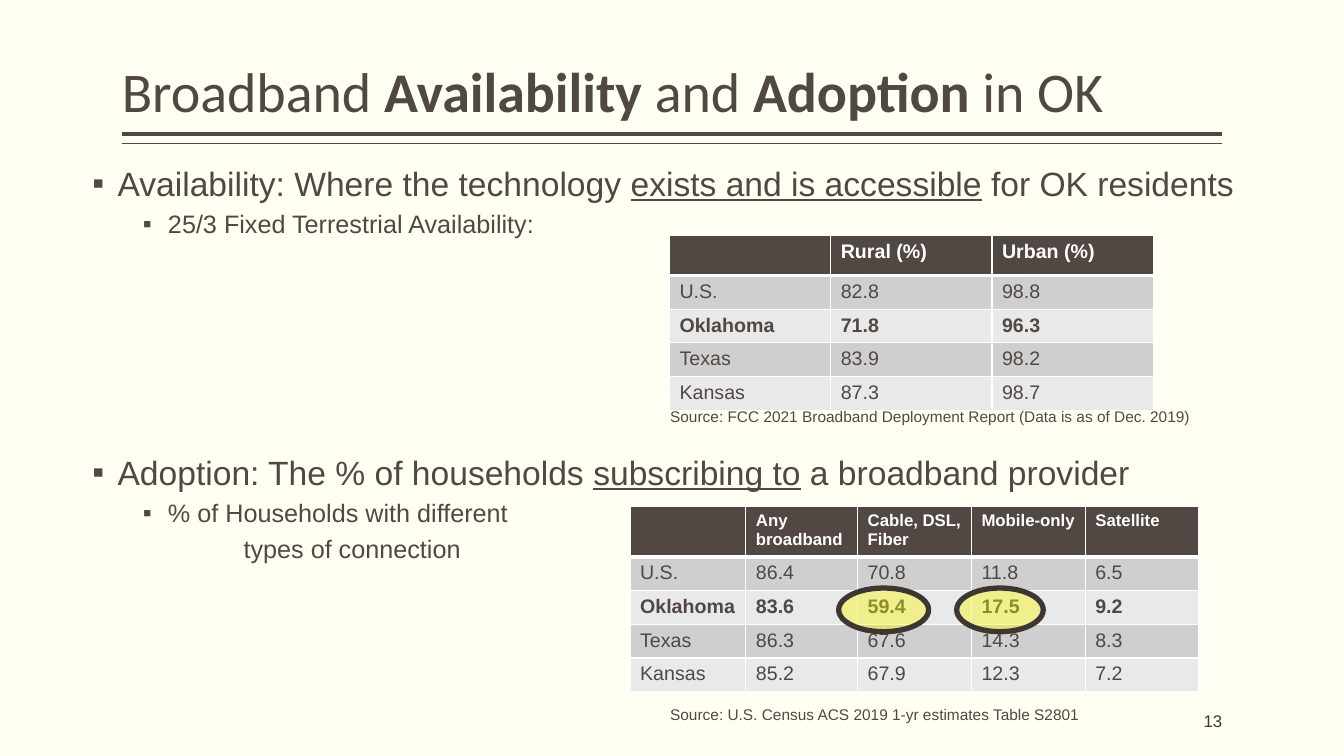
"""Build the slide on broadband availability and adoption in Oklahoma."""
from lxml import etree
from pptx import Presentation, util as u
from pptx.dml.color import RGBColor
from pptx.enum import shapes, text
from pptx.oxml import ns

CREAM = RGBColor(0xFF, 0xFF, 0xF3)
BROWN = RGBColor(0x51, 0x48, 0x43)
DARK = RGBColor(0x3D, 0x36, 0x32)
WHITE = RGBColor(0xFF, 0xFF, 0xFF)
BAND_DARK = RGBColor(0xD0, 0xCF, 0xCF)
BAND_LIGHT = RGBColor(0xE9, 0xE9, 0xE9)
YELLOW = RGBColor(0xF9, 0xF9, 0x00)

WIDTH, HEIGHT = u.Inches(13.333), u.Inches(7.5)
COLUMNS, ROWS = 160, 90


def across(columns):
    return int(WIDTH * columns / COLUMNS)


def down(rows):
    return int(HEIGHT * rows / ROWS)


def area(left, top, width, height):
    return across(left), down(top), across(width), down(height)


def add_xml(parent, tag, **attributes):
    return etree.SubElement(parent, ns.qn(tag), attributes)


def style(span, size, color=BROWN, font="Arial", bold=False):
    span.font.size = u.Pt(size)
    span.font.name = font
    span.font.bold = bold
    span.font.color.rgb = color


def add_box(page, place, anchor=text.MSO_ANCHOR.TOP, inset=0):
    frame = page.shapes.add_textbox(*area(*place)).text_frame
    frame.word_wrap = True
    frame.vertical_anchor = anchor
    frame.margin_left = frame.margin_right = u.Inches(inset)
    return frame


def add_label(page, place, words, size, color=BROWN, inset=0.1,
              anchor=text.MSO_ANCHOR.TOP, align=text.PP_ALIGN.LEFT):
    para = add_box(page, place, anchor, inset).paragraphs[0]
    para.text = words
    para.alignment = align
    style(para.runs[0], size, color)


def add_title(page, place, parts):
    para = add_box(page, place, text.MSO_ANCHOR.BOTTOM).paragraphs[0]
    para.line_spacing = 0.9
    for words, bold in parts:
        span = para.add_run()
        span.text = words
        style(span, 40, font="Calibri", bold=bold)


def add_rule(page, row, weight):
    line = page.shapes.add_connector(
        shapes.MSO_CONNECTOR.STRAIGHT,
        across(14.5), down(row), across(145.5), down(row))
    line.line.color.rgb = BROWN
    line.line.width = u.Pt(weight)
    add_xml(line.element.spPr, "a:effectLst")


def indent(para, inches, bullet):
    properties = para._p.get_or_add_pPr()
    properties.set("marL", str(u.Inches(inches)))
    properties.set("indent", str(u.Inches(-0.25 if bullet else 0)))
    if bullet:
        add_xml(properties, "a:buFont", typeface="Arial")
        add_xml(properties, "a:buChar", char="▪")
    else:
        add_xml(properties, "a:buNone")


def add_topic(page, place, parts, details):
    """Write a bulleted heading, its middle part underlined, and its details."""
    frame = add_box(page, place)
    heading = frame.paragraphs[0]
    heading.line_spacing = 0.9
    indent(heading, 0.25, True)
    for index, words in enumerate(parts):
        span = heading.add_run()
        span.text = words
        style(span, 24)
        span.font.underline = index == 1
    for words, inches, bullet in details:
        para = frame.add_paragraph()
        para.text = words
        para.line_spacing = 0.9
        para.space_before = u.Pt(6)
        indent(para, inches, bullet)
        style(para.runs[0], 18)


def add_borders(cell, top, bottom):
    properties = cell._tc.get_or_add_tcPr()
    for tag, weight in (("a:lnL", 1), ("a:lnR", 1), ("a:lnT", top), ("a:lnB", bottom)):
        line = add_xml(properties, tag, w=str(u.Pt(weight)))
        fill = add_xml(line, "a:solidFill")
        add_xml(fill, "a:srgbClr", val=str(WHITE))


def add_data_table(page, left, top, widths, heights, records, header_size):
    place = area(left, top, sum(widths), sum(heights))
    table = page.shapes.add_table(len(records), len(widths), *place).table
    for column, width in zip(table.columns, widths):
        column.width = across(width)
    for index, record in enumerate(records):
        header = index == 0
        table.rows[index].height = down(heights[index])
        for cell, words in zip(table.rows[index].cells, record):
            add_borders(cell, 3 if index == 1 else 1, 3 if header else 1)
            cell.fill.solid()
            cell.fill.fore_color.rgb = (
                BROWN if header else BAND_DARK if index % 2 else BAND_LIGHT)
            cell.text_frame.text = words
            for span in cell.text_frame.paragraphs[0].runs:
                style(span, header_size if header else 14,
                      WHITE if header else BROWN,
                      bold=header or record[0] == "Oklahoma")


def add_highlight(page, place):
    ring = page.shapes.add_shape(shapes.MSO_SHAPE.OVAL, *area(*place))
    ring.shadow.inherit = False
    ring.fill.solid()
    ring.fill.fore_color.rgb = YELLOW
    color = ring.element.spPr.find(".//" + ns.qn("a:srgbClr"))
    add_xml(color, "a:alpha", val="39000")
    ring.line.color.rgb = DARK
    ring.line.width = u.Pt(3.78)


def main():
    deck = Presentation()
    deck.slide_width, deck.slide_height = WIDTH, HEIGHT
    page = deck.slides.add_slide(deck.slide_layouts[6])
    page.background.fill.solid()
    page.background.fill.fore_color.rgb = CREAM

    add_rule(page, 16, 3)
    add_rule(page, 17.1, 1)
    add_title(page, (14.5, 1, 137, 14.4), [
        ("Broadband ", False), ("Availability", True), (" and ", False),
        ("Adoption", True), (" in OK", False)])
    add_topic(page, (11, 19.3, 138, 10), [
        "Availability: Where the technology ", "exists and is accessible",
        " for OK residents"],
        [("25/3 Fixed Terrestrial Availability:", 0.75, True)])
    add_topic(page, (11, 53.7, 138, 14), [
        "Adoption: The % of households ", "subscribing to",
        " a broadband provider"],
        [("% of Households with different", 0.75, True),
         ("types of connection", 1.5, False)])
    add_label(page, (121.5, 83.4, 24, 4.8), "13", 12, DARK, 0,
              text.MSO_ANCHOR.MIDDLE, text.PP_ALIGN.RIGHT)

    add_data_table(page, 79.7, 28, [19.2] * 3, [3.82] * 5, [
        ("", "Rural (%)", "Urban (%)"),
        ("U.S.", "82.8", "98.8"),
        ("Oklahoma", "71.8", "96.3"),
        ("Texas", "83.9", "98.2"),
        ("Kansas", "87.3", "98.7")], 14)
    add_label(page, (78.6, 47.9, 70.3, 3.5),
              "Source: FCC 2021 Broadband Deployment Report (Data is as of Dec. 2019)", 11)

    add_data_table(page, 75, 60.3, [13.8, 13.3] + [13.55] * 3, [6] + [4] * 4, [
        ("", "Any broadband", "Cable, DSL, Fiber", "Mobile-only", "Satellite"),
        ("U.S.", "86.4", "70.8", "11.8", "6.5"),
        ("Oklahoma", "83.6", "59.4", "17.5", "9.2"),
        ("Texas", "86.3", "67.6", "14.3", "8.3"),
        ("Kansas", "85.2", "67.9", "12.3", "7.2")], 12)
    add_label(page, (78.6, 83.3, 57.8, 3.5),
              "Source: U.S. Census ACS 2019 1-yr estimates Table S2801", 11)
    for left, width in ((99.85, 10.7), (113.9, 10.3)):
        add_highlight(page, (left, 70, width, 5.2))
    deck.save("out.pptx")


if __name__ == "__main__":
    main()
